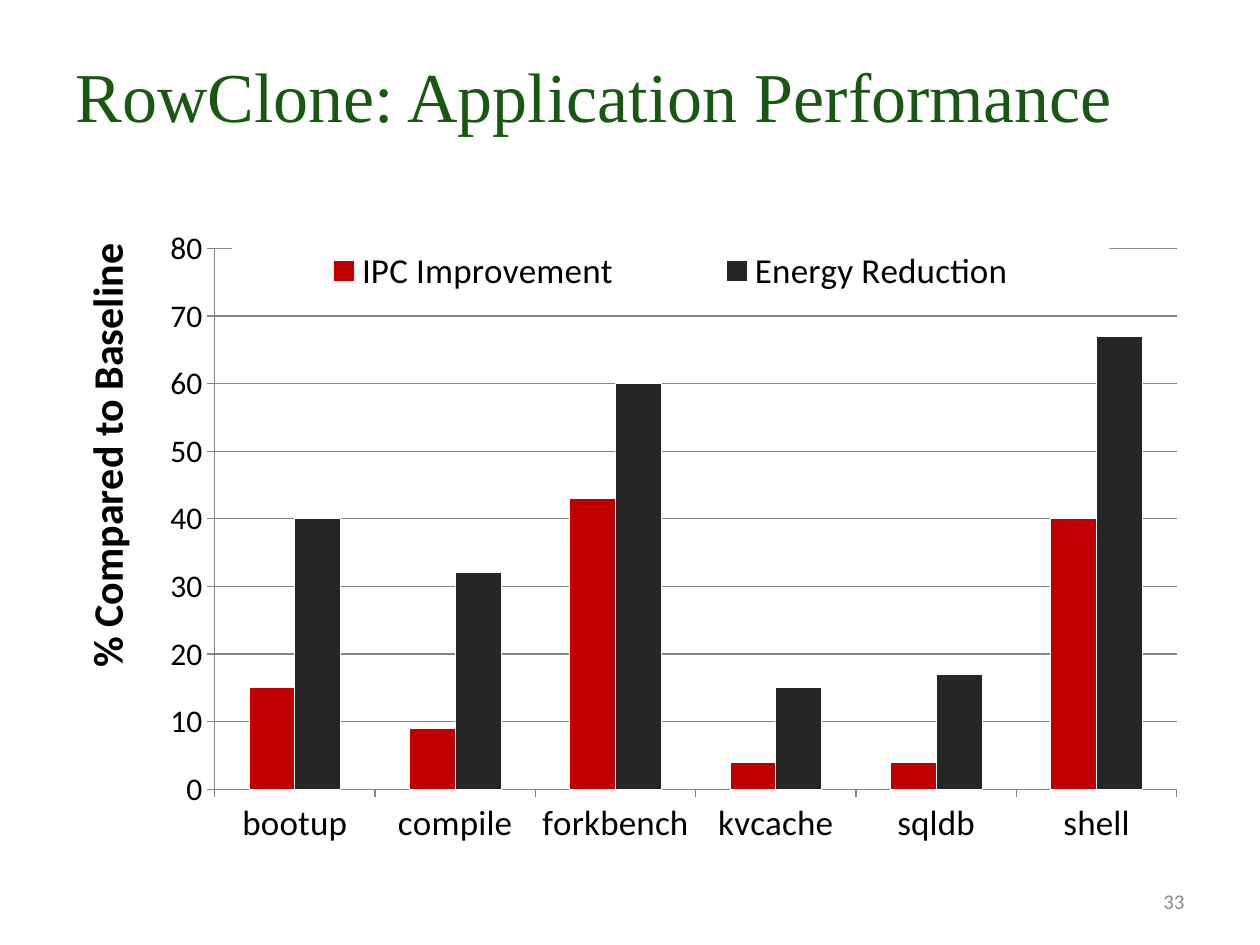
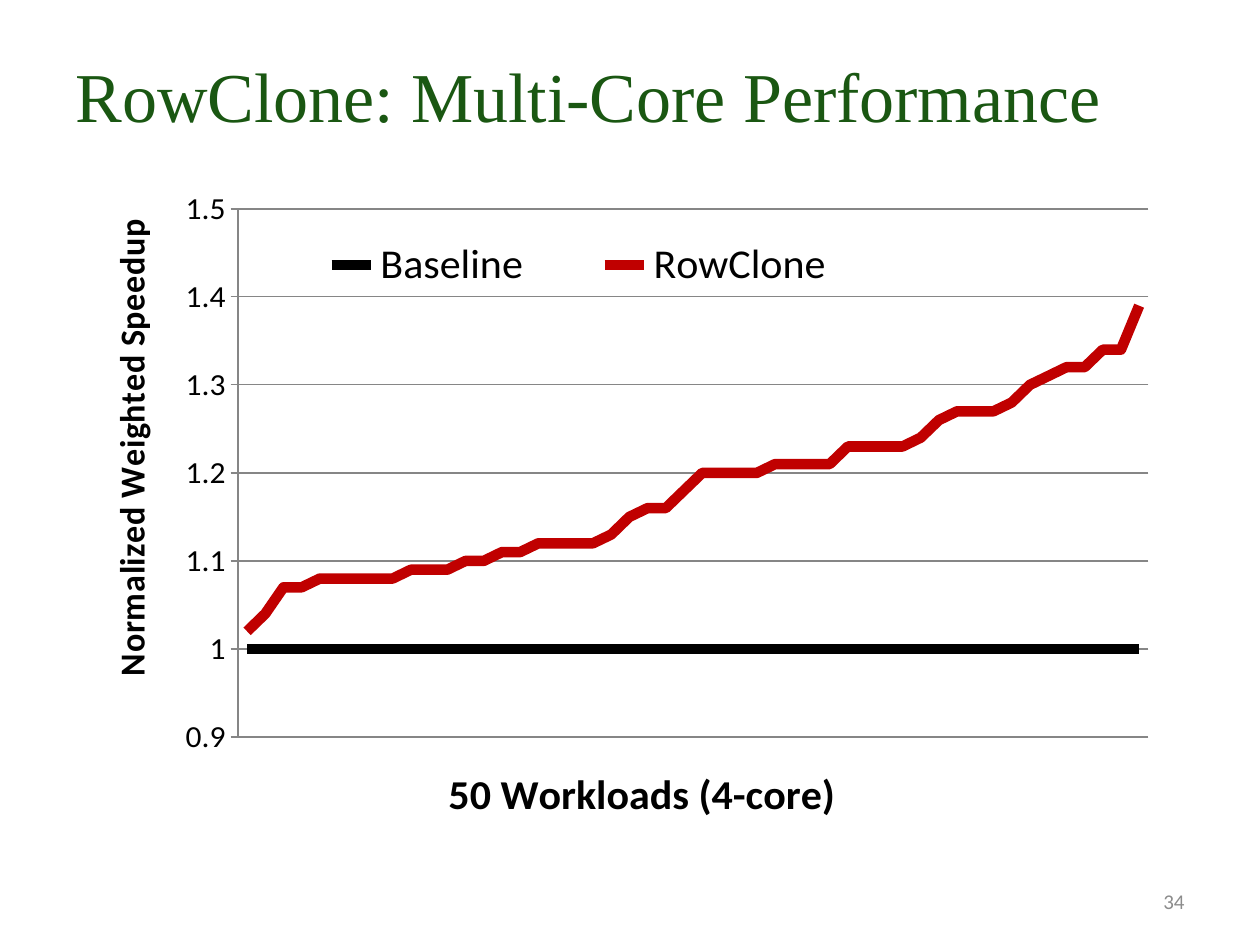
from pptx import Presentation
from pptx.chart.data import CategoryChartData
from pptx.dml.color import RGBColor
from pptx.enum.chart import XL_CHART_TYPE, XL_LEGEND_POSITION, XL_TICK_LABEL_POSITION, XL_TICK_MARK
from pptx.enum.text import MSO_ANCHOR, PP_ALIGN
from pptx.oxml import parse_xml
from pptx.oxml.ns import nsdecls
from pptx.util import Pt

COLUMNS, LINES = XL_CHART_TYPE.COLUMN_CLUSTERED, XL_CHART_TYPE.LINE
LEGEND_RIGHT = XL_LEGEND_POSITION.RIGHT
NO_LABELS = XL_TICK_LABEL_POSITION.NONE
TICK_OUT, TICK_NONE = XL_TICK_MARK.OUTSIDE, XL_TICK_MARK.NONE
MIDDLE = MSO_ANCHOR.MIDDLE
LEFT, RIGHT = PP_ALIGN.LEFT, PP_ALIGN.RIGHT

GREEN, GRAY, GRID = "1A5712", "8C8C8C", "868686"
BLACK, CHARCOAL, RED, WHITE = "000000", "262626", "C00000", "FFFFFF"
TITLE_FONT, BODY_FONT = "Times New Roman", "Calibri"

APPLICATIONS = ["bootup", "compile", "forkbench", "kvcache", "sqldb", "shell"]
IPC_IMPROVEMENT = [15, 9, 43, 4, 4, 40]
ENERGY_REDUCTION = [40, 32, 60, 15, 17, 67]
SPEEDUPS = [
    1.02, 1.04, 1.07, 1.07, 1.08, 1.08, 1.08, 1.08, 1.08, 1.09,
    1.09, 1.09, 1.1, 1.1, 1.11, 1.11, 1.12, 1.12, 1.12, 1.12,
    1.13, 1.15, 1.16, 1.16, 1.18, 1.2, 1.2, 1.2, 1.2, 1.21,
    1.21, 1.21, 1.21, 1.23, 1.23, 1.23, 1.23, 1.24, 1.26, 1.27,
    1.27, 1.27, 1.28, 1.3, 1.31, 1.32, 1.32, 1.34, 1.34, 1.39,
]


def color(hex_value):
    return RGBColor.from_string(hex_value)


def style_font(font, size, hex_value=BLACK, name=BODY_FONT, bold=False):
    font.size = Pt(size)
    font.name = name
    font.bold = bold
    font.color.rgb = color(hex_value)


def add_text(slide, box, text, size, hex_value, name, alignment):
    shape = slide.shapes.add_textbox(*map(Pt, box))
    frame = shape.text_frame
    frame.word_wrap = True
    frame.vertical_anchor = MIDDLE
    frame.text = text
    paragraph = frame.paragraphs[0]
    paragraph.alignment = alignment
    style_font(paragraph.runs[0].font, size, hex_value, name)


def add_titled_slide(presentation, title, number):
    slide = presentation.slides.add_slide(presentation.slide_layouts[6])
    add_text(slide, (36, 8.9, 675, 90), title, 40, GREEN, TITLE_FONT, LEFT)
    add_text(slide, (516, 500.5, 168, 28.75), number, 12, GRAY, BODY_FONT, RIGHT)
    return slide


def place(chart_frame, query, index, box):
    element = chart_frame.chart.element.xpath(query)[0]
    for layout in element.xpath("c:layout"):
        element.remove(layout)
    settings = '<c:layoutTarget val="inner"/>' if index == 0 else ""
    settings += '<c:xMode val="edge"/><c:yMode val="edge"/>'
    extents = (chart_frame.width, chart_frame.height) * 2
    for tag, length, extent in zip("xywh", box, extents):
        settings += f'<c:{tag} val="{Pt(length) / extent:.4f}"/>'
    element.insert(index, parse_xml(
        f'<c:layout {nsdecls("c")}><c:manualLayout>{settings}</c:manualLayout></c:layout>'))


def add_chart(slide, kind, box, categories, series, plot_box, font_size):
    data = CategoryChartData()
    data.categories = categories
    for name, values, _ in series:
        data.add_series(name, values)
    chart_frame = slide.shapes.add_chart(kind, *map(Pt, box), data)
    chart = chart_frame.chart
    chart.has_title = False
    style_font(chart.font, font_size)
    chart.plots[0].vary_by_categories = False
    place(chart_frame, "//c:plotArea", 0, plot_box)
    for item, (_, _, hex_value) in zip(chart.plots[0].series, series):
        line = item.format.line
        if kind == LINES:
            item.smooth = False
            line.color.rgb = color(hex_value)
            line.width = Pt(6)
        else:
            item.format.fill.solid()
            item.format.fill.fore_color.rgb = color(hex_value)
            line.color.rgb = color(WHITE)
            line.width = Pt(0.5)
    return chart_frame


def style_axis_line(line):
    line.color.rgb = color(GRID)
    line.width = Pt(0.75)


def set_axis_title(chart_frame, axis, tag, text, size, position):
    frame = axis.axis_title.text_frame
    frame.text = text
    style_font(frame.paragraphs[0].runs[0].font, size, bold=True)
    place(chart_frame, f"//c:{tag}/c:title", 1, position)


def style_value_axis(axis, minimum, maximum, step):
    axis.minimum_scale, axis.maximum_scale, axis.major_unit = minimum, maximum, step
    axis.major_tick_mark, axis.minor_tick_mark = TICK_OUT, TICK_NONE
    style_font(axis.tick_labels.font, 18)
    style_axis_line(axis.format.line)
    style_axis_line(axis.major_gridlines.format.line)


def add_legend(chart_frame, size, box):
    chart_frame.chart.has_legend = True
    legend = chart_frame.chart.legend
    legend.position = LEGEND_RIGHT
    legend.include_in_layout = False
    style_font(legend.font, size)
    place(chart_frame, "//c:legend", 1, box)


def fill_legend(chart, hex_value):
    chart.element.xpath("//c:legend/c:overlay")[0].addnext(parse_xml(
        f'<c:spPr {nsdecls("c", "a")}><a:solidFill><a:srgbClr val="{hex_value}"/>'
        '</a:solidFill></c:spPr>'))


def add_application_slide(presentation):
    slide = add_titled_slide(presentation, "RowClone: Application Performance", "33")
    series = [("IPC Improvement", IPC_IMPROVEMENT, RED),
              ("Energy Reduction", ENERGY_REDUCTION, CHARCOAL)]
    chart_frame = add_chart(slide, COLUMNS, (31.3, 122.6, 662.4, 379.4), APPLICATIONS, series,
                            (91.4, 19.3, 549.8, 309.2), 18)
    chart = chart_frame.chart
    chart.plots[0].gap_width = 150
    style_value_axis(chart.value_axis, 0, 80, 10)
    set_axis_title(chart_frame, chart.value_axis, "valAx", "% Compared to Baseline", 24, (9.3, 12.4))
    axis = chart.category_axis
    axis.major_tick_mark = TICK_OUT
    style_font(axis.tick_labels.font, 20)
    style_axis_line(axis.format.line)
    add_legend(chart_frame, 20, (101.3, 16.4, 501.4, 32))
    fill_legend(chart, WHITE)


def add_multicore_slide(presentation):
    slide = add_titled_slide(presentation, "RowClone: Multi-Core Performance", "34")
    count = len(SPEEDUPS)
    workloads = [str(number) for number in range(1, count + 1)]
    series = [("Baseline", [1] * count, BLACK), ("RowClone", SPEEDUPS, RED)]
    chart_frame = add_chart(slide, LINES, (48.2, 100.8, 618.5, 375.1), workloads, series,
                            (87.8, 19.1, 520.2, 310.2), 10)
    chart = chart_frame.chart
    style_value_axis(chart.value_axis, 0.9, 1.5, 0.1)
    set_axis_title(chart_frame, chart.value_axis, "valAx", "Normalized Weighted Speedup", 20, (8.9, 28.4))
    axis = chart.category_axis
    axis.major_tick_mark = TICK_NONE
    axis.tick_label_position = NO_LABELS
    style_axis_line(axis.format.line)
    set_axis_title(chart_frame, axis, "catAx", "50 Workloads (4-core)", 24, (203.8, 341.9))
    add_legend(chart_frame, 24, (102.6, 33.3, 359.8, 37.5))


def main():
    presentation = Presentation()
    presentation.slide_width, presentation.slide_height = Pt(720), Pt(540)
    add_application_slide(presentation)
    add_multicore_slide(presentation)
    presentation.save("out.pptx")


if __name__ == "__main__":
    main()
